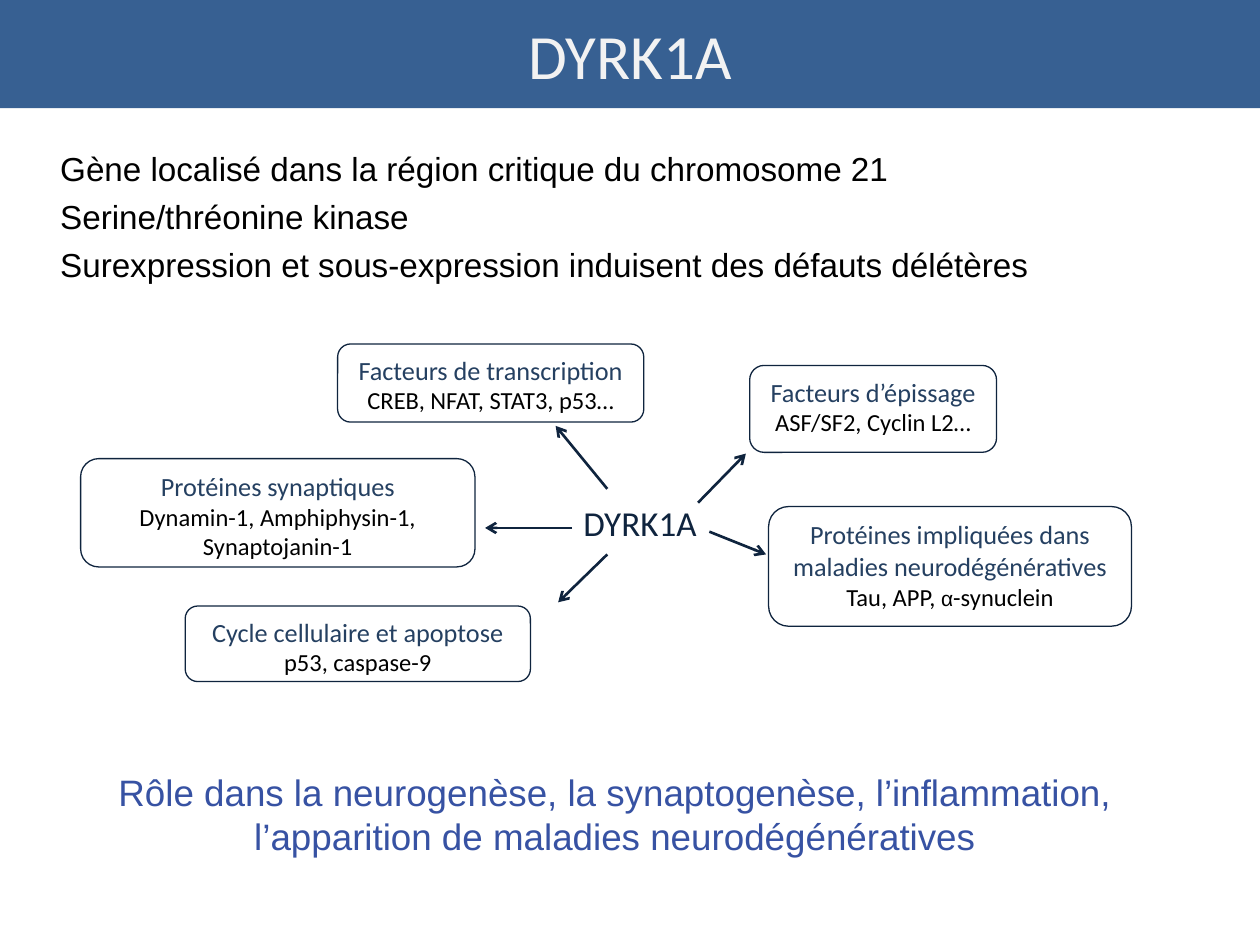
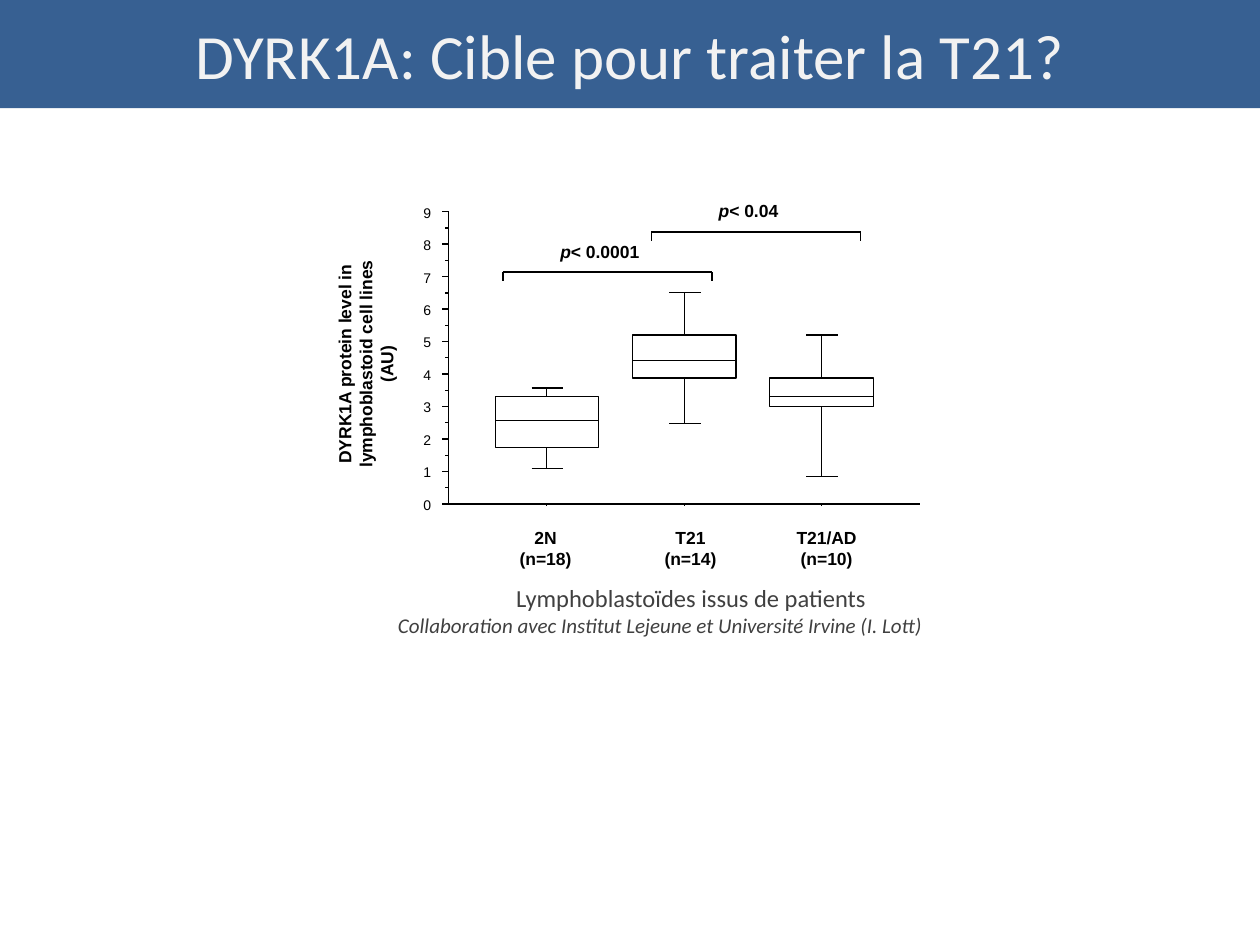
from pptx import Presentation
from pptx.dml.color import RGBColor
from pptx.enum.shapes import MSO_CONNECTOR, MSO_SHAPE
from pptx.enum.text import MSO_ANCHOR, PP_ALIGN
from pptx.oxml.ns import qn
from pptx.util import Inches, Pt
from lxml.etree import SubElement

COLORS = {
    "band": "376092", "title": "F2F2F2", "navy": "0F243E", "heading": "254061",
    "role": "3752A3", "caption": "404040", "black": "000000", "white": "FFFFFF",
}


def rgb(name):
    return RGBColor.from_string(COLORS[name])


def style_font(font, size, color, name="Calibri", bold=None, italic=None):
    font.size, font.name = Pt(size), name
    font.color.rgb = rgb(color)
    font.bold, font.italic = bold, italic


def add_paragraph(frame, text, size, color, name="Calibri", align=PP_ALIGN.CENTER,
                  bold=None, italic=None, space_before=0):
    first = frame.paragraphs[0]
    paragraph = frame.add_paragraph() if first.runs else first
    paragraph.add_run().text = text
    paragraph.alignment = align
    paragraph.space_before = Pt(space_before)
    style_font(paragraph.font, size, color, name, bold, italic)
    return paragraph


def add_text_box(shapes, left, top, width, height, margins=True):
    box = shapes.add_textbox(*map(Inches, (left, top, width, height)))
    frame = box.text_frame
    frame.word_wrap = True
    if not margins:
        frame.margin_left = frame.margin_right = frame.margin_top = frame.margin_bottom = 0
    return box


def add_box(shapes, kind, left, top, width, height, fill=None, line=None):
    shape = shapes.add_shape(kind, *map(Inches, (left, top, width, height)))
    shape.shadow.inherit = False
    if fill:
        shape.fill.solid()
        shape.fill.fore_color.rgb = rgb(fill)
    else:
        shape.fill.background()
    if line:
        shape.line.color.rgb = rgb(line)
        shape.line.width = Pt(0.75)
    else:
        shape.line.fill.background()
    shape.text_frame.word_wrap = True
    return shape


def add_line(shapes, start, end, color="black", weight=0.75, arrow=False):
    line = shapes.add_connector(MSO_CONNECTOR.STRAIGHT, *map(Inches, (*start, *end)))
    line.line.color.rgb = rgb(color)
    line.line.width = Pt(weight)
    if arrow:
        SubElement(line.line._get_or_add_ln(), qn("a:tailEnd"), type="arrow")
    SubElement(line._element.spPr, qn("a:effectLst"))
    return line


def add_titled_slide(presentation, title):
    slide = presentation.slides.add_slide(presentation.slide_layouts[6])
    band = add_box(slide.shapes, MSO_SHAPE.RECTANGLE, 0, 0, 10, 0.86, fill="band")
    band.text_frame.vertical_anchor = MSO_ANCHOR.MIDDLE
    add_paragraph(band.text_frame, title, 36, "title")
    return slide


def add_facts(slide, left, top, width, height):
    frame = add_text_box(slide.shapes, left, top, width, height).text_frame
    for fact in (
        "Gène localisé dans la région critique du chromosome 21",
        "Serine/thréonine kinase",
        "Surexpression et sous-expression induisent des défauts délétères",
    ):
        add_paragraph(frame, fact, 19, "black", "Arial", PP_ALIGN.LEFT, space_before=4.5)


def add_role(slide, left, top, width, height):
    frame = add_text_box(slide.shapes, left, top, width, height).text_frame
    add_paragraph(frame, "Rôle dans la neurogenèse, la synaptogenèse, l’inflammation, "
                  "l’apparition de maladies neurodégénératives", 21, "role", "Arial",
                  space_before=4.5)


def add_target_map(slide, left, top):
    shapes = slide.shapes
    hub = add_box(shapes, MSO_SHAPE.ROUNDED_RECTANGLE, left + 3.79, top + 1.13, 1.3, 0.58,
                  fill="white")
    hub.text_frame.vertical_anchor = MSO_ANCHOR.MIDDLE
    add_paragraph(hub.text_frame, "DYRK1A", 20, "navy")

    targets = [
        ((2.04, 0, 2.43, 0.62), "Facteurs de transcription",
         ["CREB, NFAT, STAT3, p53…"], (4.18, 1.15), (3.77, 0.65)),
        ((5.31, 0.17, 1.96, 0.69), "Facteurs d’épissage",
         ["ASF/SF2, Cyclin L2…"], (4.9, 1.26), (5.28, 0.87)),
        ((0, 0.91, 3.13, 0.86), "Protéines synaptiques",
         ["Dynamin-1, Amphiphysin-1, Synaptojanin-1"], (3.9, 1.46), (3.21, 1.46)),
        ((0.83, 2.08, 2.74, 0.6), "Cycle cellulaire et apoptose",
         ["p53, caspase-9"], (4.18, 1.67), (3.79, 2.05)),
        ((5.46, 1.29, 2.88, 0.95), "Protéines impliquées dans maladies neurodégénératives",
         ["Tau, APP, ", "α", "-synuclein"], (4.99, 1.49), (5.44, 1.67)),
    ]
    for (x, y, width, height), heading, examples, start, end in targets:
        box = add_box(shapes, MSO_SHAPE.ROUNDED_RECTANGLE, left + x, top + y, width, height,
                      line="navy")
        box.text_frame.vertical_anchor = MSO_ANCHOR.TOP
        add_paragraph(box.text_frame, heading, 15, "heading")
        paragraph = add_paragraph(box.text_frame, examples[0], 14, "black")
        for text in examples[1:]:
            run = paragraph.add_run()
            run.text = text
            if text == "α":
                style_font(run.font, 12, "black", "Arial")
        add_line(shapes, (left + start[0], top + start[1]), (left + end[0], top + end[1]),
                 "navy", 1.5, arrow=True)


def add_box_and_whiskers(shapes, center, levels):
    low, lower, median, upper, high = levels
    x1, x2 = center - 0.41, center + 0.41
    outline = [(x1, median), (x1, upper), (x2, upper), (x2, median), (x1, median),
               (x1, lower), (x2, lower), (x2, median), (x1, median)]
    points = [(Inches(x), Inches(y)) for x, y in outline]
    builder = shapes.build_freeform(*points[0], scale=1.0)
    builder.add_line_segments(points[1:], close=False)
    box = builder.convert_to_shape()
    box.shadow.inherit = False
    box.fill.background()
    box.line.color.rgb = rgb("black")
    box.line.width = Pt(0.75)
    for edge, end in ((lower, low), (upper, high)):
        add_line(shapes, (center, edge), (center, end))
        add_line(shapes, (center - 0.12, end), (center + 0.13, end))


def add_significance(shapes, left, top, value):
    right = left + 1.66
    add_line(shapes, (left, top), (right, top), weight=1)
    for x in (left, right):
        add_line(shapes, (x, top), (x, top + 0.07), weight=1)
    box = add_text_box(shapes, left - 0.1, top - 0.3, 1.74, 0.27)
    paragraph = add_paragraph(box.text_frame, "p", 10, "black", "Arial", bold=True)
    paragraph.runs[0].font.italic = True
    paragraph.add_run().text = f"< {value}"


def add_box_plot(slide, left, top, width, height):
    shapes = slide.shapes.add_group_shape().shapes
    bottom, maximum = top + height, 9

    def level(value):
        return bottom - value * height / maximum

    add_line(shapes, (left, bottom), (left + width, bottom))
    add_line(shapes, (left, bottom), (left, top))
    for half in range(2 * maximum + 1):
        y = level(half / 2)
        add_line(shapes, (left, y), (left - (0.03 if half % 2 else 0.05), y))
        if half % 2 == 0:
            tick = add_text_box(shapes, left - 0.2, y - 0.06, 0.16, 0.14, margins=False)
            add_paragraph(tick.text_frame, str(half // 2), 8, "black", "Arial", PP_ALIGN.LEFT)

    samples = [
        ("2N", 18, -0.01, (1.1, 1.75, 2.56, 3.3, 3.57)),
        ("T21", 14, 0.05, (2.48, 3.88, 4.42, 5.2, 6.52)),
        ("T21/AD", 10, 0.04, (0.85, 3, 3.3, 3.88, 5.2)),
    ]
    for index, (name, count, label_shift, values) in enumerate(samples):
        center = left + 0.78 + 1.09 * index
        add_line(shapes, (center, bottom), (center, bottom + 0.02))
        add_box_and_whiskers(shapes, center, [level(value) for value in values])
        label = add_text_box(shapes, center + label_shift - 0.27, bottom + 0.18, 0.54, 0.34,
                             margins=False)
        for text in (name, f"(n={count})"):
            add_paragraph(label.text_frame, text, 10, "black", "Arial", bold=True)

    axis_title = add_text_box(shapes, left - 1.62, top + 0.96, 1.92, 0.5, margins=False)
    axis_title.rotation = 270
    for text in ("DYRK1A protein level in", "lymphoblastoid cell lines", "(AU)"):
        add_paragraph(axis_title.text_frame, text, 10, "black", "Arial", bold=True)

    add_significance(shapes, left + 0.43, top + 0.48, "0.0001")
    add_significance(shapes, left + 1.61, top + 0.16, "0.04")


def add_caption(slide, left, top, width, height):
    frame = add_text_box(slide.shapes, left, top, width, height).text_frame
    add_paragraph(frame, "Lymphoblastoïdes issus de patients", 14, "caption")
    add_paragraph(frame, "Collaboration avec Institut Lejeune et Université Irvine (I. Lott)",
                  12, "caption", align=PP_ALIGN.LEFT, italic=True)


def main():
    presentation = Presentation()
    presentation.slide_width, presentation.slide_height = Inches(10), Inches(7.5)

    gene_slide = add_titled_slide(presentation, "DYRK1A")
    add_target_map(gene_slide, 0.64, 2.73)
    add_facts(gene_slide, 0.38, 1.13, 9, 1.41)
    add_role(gene_slide, 0.38, 6.06, 9, 0.89)

    target_slide = add_titled_slide(presentation, "DYRK1A: Cible pour traiter la T21?")
    add_box_plot(target_slide, 3.56, 1.68, 3.74, 2.32)
    add_caption(target_slide, 3.06, 4.58, 4.85, 0.54)

    presentation.save("out.pptx")


if __name__ == "__main__":
    main()
